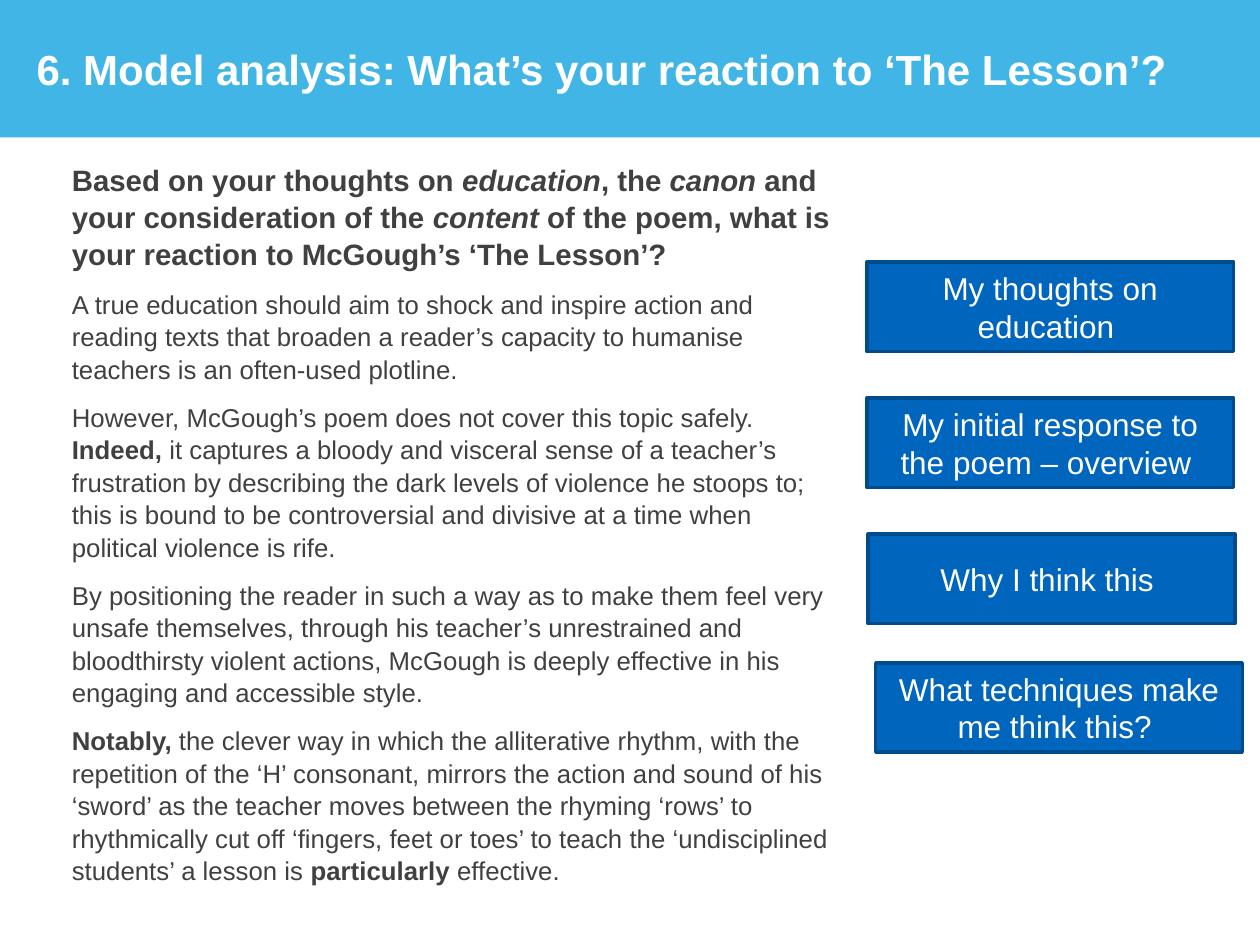
import pptx
import pptx.util
import pptx.dml.color
import pptx.enum.shapes
import pptx.enum.text
from lxml import etree

Inches = pptx.util.Inches
Pt = pptx.util.Pt
ALIGN = pptx.enum.text.PP_ALIGN
ANCHOR = pptx.enum.text.MSO_ANCHOR
DRAWING_NS = "http://schemas.openxmlformats.org/drawingml/2006/main"

QUESTION = [
    ("Based on your thoughts on ", "b"), ("education", "bi"),
    (", the ", "b"), ("canon", "bi"),
    (" and your consideration of the ", "b"), ("content", "bi"),
    (" of the poem, what is your reaction to McGough’s ‘The Lesson’?", "b"),
]
ANSWER = [
    [("A true education should aim to shock and inspire action and reading "
      "texts that broaden a reader’s capacity to humanise teachers is an "
      "often-used plotline.", "")],
    [("However, McGough’s poem does not cover this topic safely. ", ""),
     ("Indeed,", "b"),
     (" it captures a bloody and visceral sense of a teacher’s frustration by "
      "describing the dark levels of violence he stoops to; this is bound to "
      "be controversial and divisive at a time when political violence is "
      "rife.", "")],
    [("By positioning the reader in such a way as to make them feel very "
      "unsafe themselves, through his teacher’s unrestrained and bloodthirsty "
      "violent actions, McGough is deeply effective in his engaging and "
      "accessible style.", "")],
    [("Notably,", "b"),
     (" the clever way in which the alliterative rhythm, with the repetition "
      "of the ‘H’ consonant, mirrors the action and sound of his ‘sword’ as "
      "the teacher moves between the rhyming ‘rows’ to rhythmically cut off "
      "‘fingers, feet or toes’ to teach the ‘undisciplined students’ a lesson "
      "is ", ""),
     ("particularly", "b"), (" effective.", "")],
]
PROMPTS = [
    ("My thoughts on education ", 6.88, 2.08),
    ("My initial response to the poem – overview ", 6.88, 3.16),
    ("Why I think this ", 6.89, 4.24),
    ("What techniques make me think this? ", 6.95, 5.26),
]


def rgb(value):
    return pptx.dml.color.RGBColor.from_string(value)


class Deck:
    font = "Arial"
    band_color = "41B6E6"
    box_color = "0065BD"
    edge_color = "004B8C"
    text_color = "404040"
    white = "FFFFFF"

    def __init__(self, prs):
        self.s = prs.slides.add_slide(prs.slide_layouts[1])

    def place(self, sp, left, top, width, height):
        sp.left, sp.top = Inches(left), Inches(top)
        sp.width, sp.height = Inches(width), Inches(height)

    def style(self, r, size, color, marks=""):
        r.font.name = self.font
        r.font.size = Pt(size)
        r.font.color.rgb = rgb(color)
        r.font.bold = "b" in marks
        r.font.italic = "i" in marks

    def rect(self, left, top, width, height, fill):
        sp = self.s.shapes.add_shape(
            pptx.enum.shapes.MSO_SHAPE.RECTANGLE,
            Inches(left), Inches(top), Inches(width), Inches(height))
        sp.shadow.inherit = False
        sp.fill.solid()
        sp.fill.fore_color.rgb = rgb(fill)
        return sp

    def band(self, width, height):
        sp = self.rect(0, 0, width, height, self.band_color)
        sp.line.fill.background()
        self.s.shapes.element.insert(2, sp.element)

    def title(self, text):
        sp = self.s.shapes.title
        self.place(sp, 0.19, 0.12, 9.7, 0.85)
        tf = sp.text_frame
        tf.text = text
        tf.auto_size = pptx.enum.text.MSO_AUTO_SIZE.NONE
        tf.vertical_anchor = ANCHOR.MIDDLE
        p = tf.paragraphs[0]
        p.alignment = ALIGN.LEFT
        self.style(p.runs[0], 24, self.white, "b")

    def paragraph(self, p, runs, size, before):
        pPr = p._p.get_or_add_pPr()
        pPr.set("marL", "0")
        pPr.set("indent", "0")
        etree.SubElement(pPr, f"{{{DRAWING_NS}}}buNone")
        p.line_spacing = 1.05
        p.space_before = Pt(before)
        for text, marks in runs:
            r = p.add_run()
            r.text = text
            self.style(r, size, self.text_color, marks)

    def body(self, question, answer):
        sp = self.s.placeholders[1]
        self.place(sp, 0.47, 1.22, 6.27, 5.25)
        tf = sp.text_frame
        tf.auto_size = pptx.enum.text.MSO_AUTO_SIZE.NONE
        self.paragraph(tf.paragraphs[0], question, 16.8, 0)
        for runs in answer:
            self.paragraph(tf.add_paragraph(), runs, 14.7, 9)

    def prompt(self, text, left, top):
        sp = self.rect(left, top, 2.91, 0.71, self.box_color)
        sp.line.color.rgb = rgb(self.edge_color)
        sp.line.width = Pt(2)
        tf = sp.text_frame
        tf.text = text
        tf.word_wrap = True
        tf.vertical_anchor = ANCHOR.MIDDLE
        p = tf.paragraphs[0]
        p.alignment = ALIGN.CENTER
        self.style(p.runs[0], 18, self.white)


def main():
    prs = pptx.Presentation()
    prs.slide_width, prs.slide_height = Inches(10), Inches(7.5)
    deck = Deck(prs)
    deck.band(10, 1.09)
    deck.title("6. Model analysis: What’s your reaction to ‘The Lesson’?")
    deck.body(QUESTION, ANSWER)
    for text, left, top in PROMPTS:
        deck.prompt(text, left, top)
    prs.save("out.pptx")


if __name__ == "__main__":
    main()
